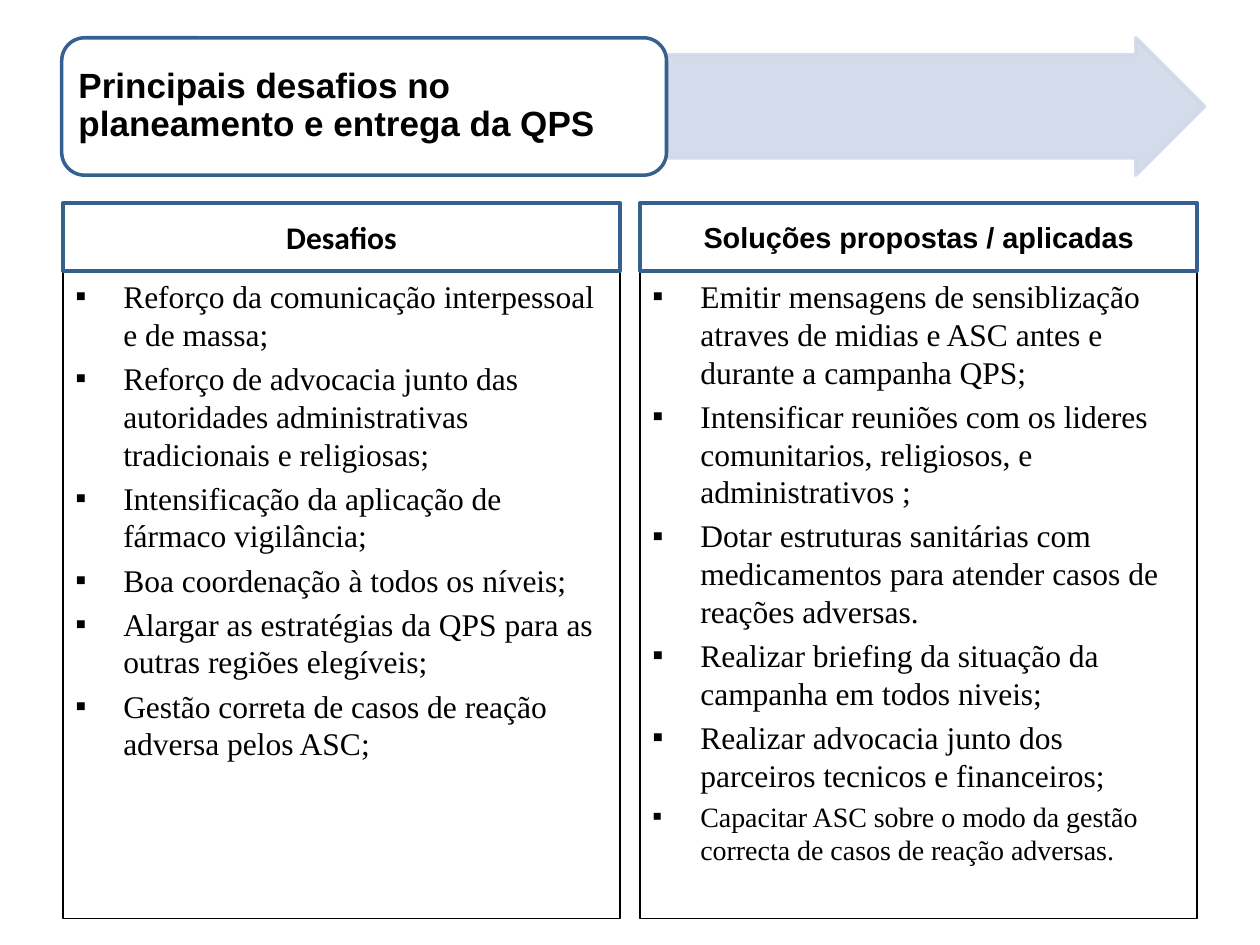
from dataclasses import dataclass
from typing import Optional

from lxml import etree
from pptx import Presentation
from pptx import util as u
from pptx.dml import color
from pptx.enum import shapes, text
from pptx.oxml import ns

KIND = shapes.MSO_SHAPE


@dataclass(frozen=True)
class Theme:
    ink: str = "000000"
    paper: str = "FFFFFF"
    edge: str = "376092"
    pale: str = "D0D8E8"
    title: float = 20
    head: float = 18
    head_alt: float = 16.5
    body: float = 18
    small: float = 16
    thick: float = 2
    thin: float = 0.75


@dataclass(frozen=True)
class Box:
    x: float
    y: float
    w: float
    h: float


@dataclass(frozen=True)
class Item:
    words: str
    size: float


@dataclass(frozen=True)
class Column:
    x: float
    head: str
    font: str
    size: float
    items: tuple[Item, ...]


LOOK = Theme()
WIDE, HEAD_Y, HEAD_H, LIST_H = 4.42, 1.61, 0.54, 5.14

COLUMNS = (
    Column(0.5, "Desafios", "Calibri", LOOK.head, (
        Item("Reforço da comunicação interpessoal e de massa;", LOOK.body),
        Item("Reforço de advocacia junto das autoridades administrativas "
             "tradicionais e religiosas;", LOOK.body),
        Item("Intensificação da aplicação de fármaco vigilância;", LOOK.body),
        Item("Boa coordenação à todos os níveis;", LOOK.body),
        Item("Alargar as estratégias da QPS para as outras regiões elegíveis;",
             LOOK.body),
        Item("Gestão correta de casos de reação adversa pelos ASC;", LOOK.body),
    )),
    Column(5.08, "Soluções propostas / aplicadas", "Arial", LOOK.head_alt, (
        Item("Emitir mensagens de sensiblização atraves de midias e ASC antes e "
             "durante a campanha QPS;", LOOK.body),
        Item("Intensificar reuniões com os lideres comunitarios, religiosos, e "
             "administrativos ;", LOOK.body),
        Item("Dotar estruturas sanitárias com medicamentos para atender casos de "
             "reações adversas.", LOOK.body),
        Item("Realizar briefing da situação da campanha em todos niveis;",
             LOOK.body),
        Item("Realizar advocacia junto dos parceiros tecnicos e financeiros;",
             LOOK.body),
        Item("Capacitar ASC sobre o modo da gestão correcta de casos de reação "
             "adversas.", LOOK.small),
    )),
)


def assign(target, values: dict) -> None:
    for name, value in values.items():
        setattr(target, name, value)


def add_box(slide, kind, box: Box, fill: Optional[str], line: str, width: float):
    shape = slide.shapes.add_shape(
        kind, *(u.Inches(n) for n in (box.x, box.y, box.w, box.h)))
    shape.shadow.inherit = False
    if fill:
        shape.fill.solid()
        shape.fill.fore_color.rgb = color.RGBColor.from_string(fill)
    else:
        shape.fill.background()
    shape.line.color.rgb = color.RGBColor.from_string(line)
    shape.line.width = u.Pt(width)
    return shape


def set_frame(shape, anchor, **margins: float):
    frame = shape.text_frame
    assign(frame, {"word_wrap": True, "vertical_anchor": anchor})
    assign(frame, {f"margin_{k}": u.Inches(v) for k, v in margins.items()})
    return frame


def write(para, words: str, font: str, size: float, bold: bool, align) -> None:
    para.alignment = align
    run = para.add_run()
    run.text = words
    assign(run.font, {"name": font, "size": u.Pt(size), "bold": bold})
    run.font.color.rgb = color.RGBColor.from_string(LOOK.ink)


def add_bullet(para) -> None:
    props = para._p.get_or_add_pPr()
    indent = u.Inches(0.38)
    props.set("marL", str(indent))
    props.set("indent", str(-indent))
    etree.SubElement(props, ns.qn("a:buFont")).set("typeface", "Arial")
    etree.SubElement(props, ns.qn("a:buChar")).set("char", "▪")


def draw_title(slide) -> None:
    # Pale arrow behind the title
    arrow = add_box(slide, KIND.RIGHT_ARROW, Box(5.28, 0.3, 4.28, 1.09),
                    LOOK.pale, LOOK.pale, LOOK.thick)
    arrow.adjustments[0] = 0.75
    for tone in arrow._element.spPr.iter(ns.qn("a:srgbClr")):
        etree.SubElement(tone, ns.qn("a:alpha")).set("val", "90000")

    # Rounded title panel
    panel = add_box(slide, KIND.ROUNDED_RECTANGLE, Box(0.49, 0.3, 4.8, 1.09),
                    LOOK.paper, LOOK.edge, LOOK.thick)
    frame = set_frame(panel, text.MSO_ANCHOR.MIDDLE,
                      left=0.08, right=0.08, top=0.04, bottom=0.04)
    para = frame.paragraphs[0]
    para.line_spacing = 0.9
    write(para, "Principais desafios no planeamento e entrega da QPS",
          "Arial", LOOK.title, True, text.PP_ALIGN.LEFT)


def draw_column(slide, col: Column) -> None:
    # Bulleted list
    body = add_box(slide, KIND.RECTANGLE,
                   Box(col.x, HEAD_Y + HEAD_H, WIDE, LIST_H),
                   None, LOOK.ink, LOOK.thin)
    frame = set_frame(body, text.MSO_ANCHOR.TOP)
    for n, item in enumerate(col.items):
        para = frame.add_paragraph() if n else frame.paragraphs[0]
        para.space_before = u.Pt(0.2 * item.size)
        write(para, item.words, "Times New Roman", item.size, False,
              text.PP_ALIGN.LEFT)
        add_bullet(para)

    # Heading
    head = add_box(slide, KIND.RECTANGLE, Box(col.x, HEAD_Y, WIDE, HEAD_H),
                   LOOK.paper, LOOK.edge, LOOK.thick)
    frame = set_frame(head, text.MSO_ANCHOR.MIDDLE)
    write(frame.paragraphs[0], col.head, col.font, col.size, True,
          text.PP_ALIGN.CENTER)


def main() -> None:
    deck = Presentation()
    assign(deck, {"slide_width": u.Inches(10), "slide_height": u.Inches(7.5)})
    slide = deck.slides.add_slide(deck.slide_layouts[6])
    draw_title(slide)
    for col in COLUMNS:
        draw_column(slide, col)
    deck.save("out.pptx")


if __name__ == "__main__":
    main()
